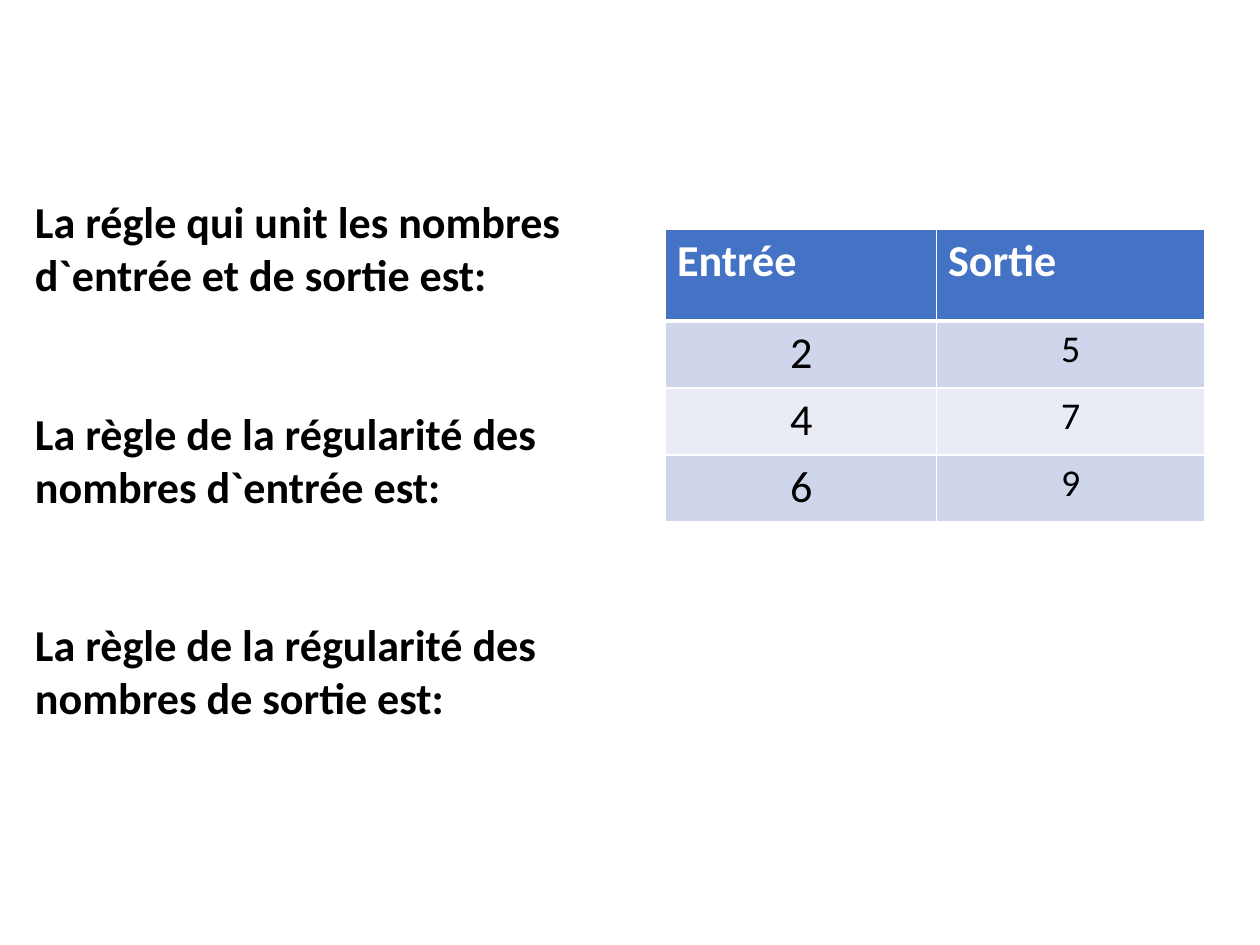
from lxml.etree import SubElement
from pptx import Presentation
from pptx.dml.color import RGBColor
from pptx.enum.text import PP_ALIGN
from pptx.oxml.ns import qn
from pptx.util import Inches, Pt

WIDTH, HEIGHT = 11.11, 8.33
WHITE, BLACK, BLUE = "FFFFFF", "000000", "4472C4"
BANDS = ["CFD5EA", "E9EBF5"]


def write(para, text, size=28, color=BLACK, bold=False, align=PP_ALIGN.LEFT):
    para.alignment = align
    span = para.add_run()
    span.text = text
    span.font.name = "Calibri"
    span.font.size = Pt(size)
    span.font.bold = bold
    span.font.color.rgb = RGBColor.from_string(color)


def add_border(cell, side, points):
    line = SubElement(cell._tc.get_or_add_tcPr(), qn(f"a:ln{side}"), w=str(Pt(points)))
    fill = SubElement(line, qn("a:solidFill"))
    SubElement(fill, qn("a:srgbClr"), val=WHITE)


deck = Presentation()
deck.slide_width, deck.slide_height = Inches(WIDTH), Inches(HEIGHT)
page = deck.slides.add_slide(deck.slide_layouts[6])

# Questions on the left
questions = [
    "La régle qui unit les nombres d`entrée et de sortie est:",
    "La règle de la régularité des nombres d`entrée est:",
    "La règle de la régularité des nombres de sortie est:",
]
box = page.shapes.add_textbox(Inches(0.21), Inches(HEIGHT * 0.2),
                              Inches(5.39), Inches(HEIGHT * 0.7))
box.text_frame.word_wrap = True
for index, question in enumerate(questions):
    para = box.text_frame.paragraphs[0] if index == 0 else box.text_frame.add_paragraph()
    para.space_before = Pt(67 if index else 0)
    write(para, question, bold=True)

# Table of input and output numbers
rows = [("Entrée", "Sortie"), ("2", "5"), ("4", "7"), ("6", "9")]
column_widths = [2.39, 2.36]
row_heights = [0.81] + [0.59] * 3
table = page.shapes.add_table(
    len(rows), len(column_widths), Inches(5.87), Inches(2.02),
    Inches(sum(column_widths)), Inches(sum(row_heights))).table
for column, width in zip(table.columns, column_widths):
    column.width = Inches(width)

for row_index, values in enumerate(rows):
    table.rows[row_index].height = Inches(row_heights[row_index])
    header = row_index == 0
    for column_index, value in enumerate(values):
        cell = table.cell(row_index, column_index)
        for side in "LRTB":
            under_header = (row_index, side) in [(0, "B"), (1, "T")]
            add_border(cell, side, 3 if under_header else 1)
        cell.fill.solid()
        cell.fill.fore_color.rgb = RGBColor.from_string(
            BLUE if header else BANDS[(row_index - 1) % 2])
        para = cell.text_frame.paragraphs[0]
        if header:
            write(para, value, color=WHITE, bold=True)
        else:
            write(para, value, size=[28, 24][column_index], align=PP_ALIGN.CENTER)

deck.save("out.pptx")
